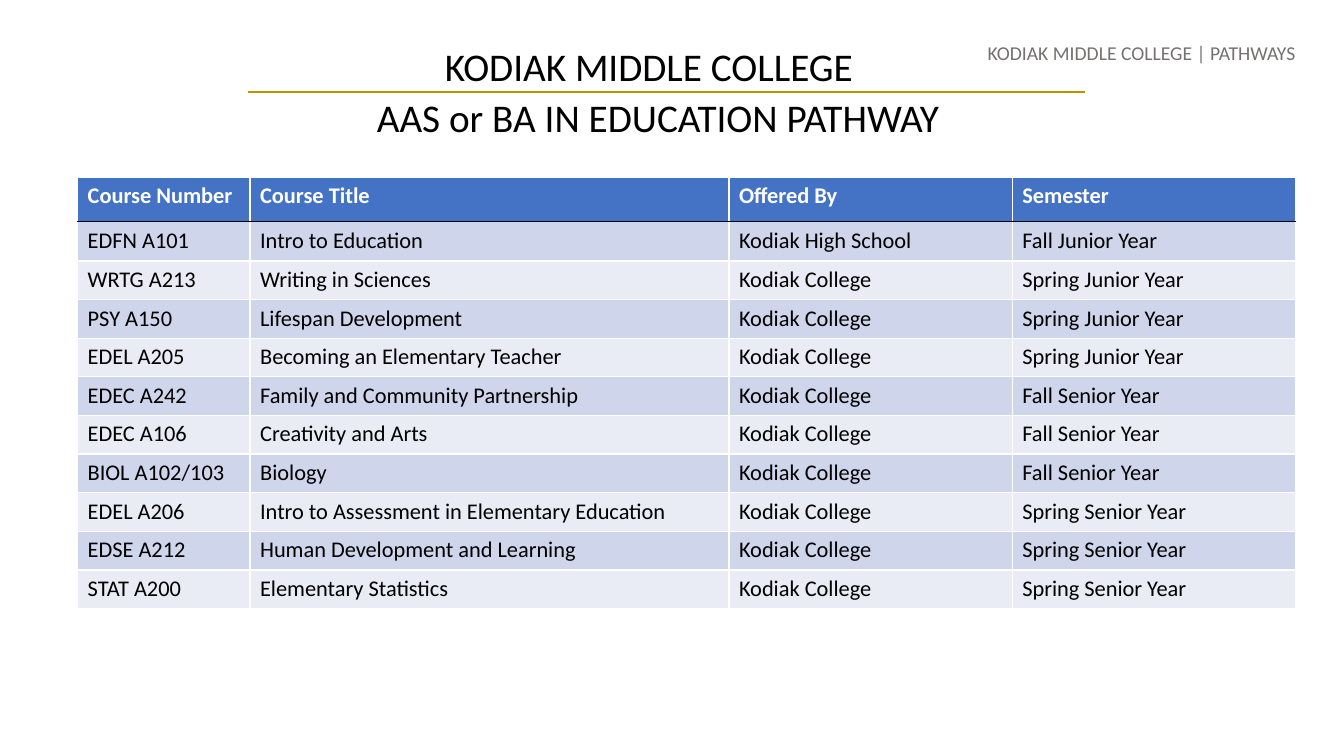
"""Builds the education pathway slide with its course table."""
from lxml.etree import SubElement
from pptx import Presentation
from pptx.dml.color import RGBColor
from pptx.enum.shapes import MSO_CONNECTOR
from pptx.enum.text import PP_ALIGN
from pptx.oxml.ns import qn
from pptx.util import Inches, Pt

HEADER = ("Course Number", "Course Title", "Offered By", "Semester")
COLLEGE = "Kodiak College"
COURSES = [
    ("EDFN A101", "Intro to Education", "Kodiak High School", "Fall Junior Year"),
    ("WRTG A213", "Writing in Sciences", COLLEGE, "Spring Junior Year"),
    ("PSY A150", "Lifespan Development", COLLEGE, "Spring Junior Year"),
    ("EDEL A205", "Becoming an Elementary Teacher", COLLEGE, "Spring Junior Year"),
    ("EDEC A242", "Family and Community Partnership", COLLEGE, "Fall Senior Year"),
    ("EDEC A106", "Creativity and Arts", COLLEGE, "Fall Senior Year"),
    ("BIOL A102/103", "Biology", COLLEGE, "Fall Senior Year"),
    ("EDEL A206", "Intro to Assessment in Elementary Education", COLLEGE, "Spring Senior Year"),
    ("EDSE A212", "Human Development and Learning", COLLEGE, "Spring Senior Year"),
    ("STAT A200", "Elementary Statistics", COLLEGE, "Spring Senior Year"),
]
COLUMN_WIDTHS = (1.71, 4.75, 2.81, 2.81)
TABLE_HEIGHT, HEADER_HEIGHT, FIRST_HEIGHT = 4.28, 0.44, 0.39


def rgb(value):
    return RGBColor.from_string(value)


class PathwaySlide:
    font = "Calibri"
    black, white, gray, gold = "000000", "FFFFFF", "767171", "BF9000"
    header_fill, bands = "4472C4", ("CFD5EA", "E9EBF5")

    def __init__(self, prs):
        self.slide = prs.slides.add_slide(prs.slide_layouts[6])

    def style(self, p, size, color, bold=False):
        for r in p.runs:
            r.font.name = self.font
            r.font.size = Pt(size)
            r.font.bold = bold
            r.font.color.rgb = rgb(color)

    def text(self, x, y, w, h, text, size, color, align, wrap=True):
        sp = self.slide.shapes.add_textbox(Inches(x), Inches(y), Inches(w), Inches(h))
        tf = sp.text_frame
        tf.word_wrap = wrap
        tf.text = text
        p = tf.paragraphs[0]
        p.alignment = align
        self.style(p, size, color)

    def line(self, x1, y1, x2, y2, color, width):
        sp = self.slide.shapes.add_connector(
            MSO_CONNECTOR.STRAIGHT, Inches(x1), Inches(y1), Inches(x2), Inches(y2))
        sp.line.color.rgb = rgb(color)
        sp.line.width = Pt(width)
        SubElement(sp._element.spPr, qn("a:effectLst"))

    def borders(self, cell, row):
        tc_pr = cell._tc.get_or_add_tcPr()
        black_side = {0: "B", 1: "T"}.get(row)
        for side in "LRTB":
            ln = SubElement(tc_pr, qn(f"a:ln{side}"), w=str(Pt(1)))
            fill = SubElement(ln, qn("a:solidFill"))
            color = self.black if side == black_side else self.white
            SubElement(fill, qn("a:srgbClr"), val=color)

    def table(self, x, y, widths, heights, rows):
        table = self.slide.shapes.add_table(
            len(rows), len(widths), Inches(x), Inches(y),
            Inches(sum(widths)), Inches(sum(heights))).table
        for column, width in zip(table.columns, widths):
            column.width = Inches(width)
        for i, (height, values) in enumerate(zip(heights, rows)):
            table.rows[i].height = Inches(height)
            header = i == 0
            for j, value in enumerate(values):
                cell = table.cell(i, j)
                cell.text_frame.text = value
                color = self.white if header else self.black
                self.style(cell.text_frame.paragraphs[0], 16, color, header)
                self.borders(cell, i)
                cell.fill.solid()
                cell.fill.fore_color.rgb = rgb(
                    self.header_fill if header else self.bands[(i - 1) % 2])


def main():
    prs = Presentation()
    prs.slide_width, prs.slide_height = Inches(13.33), Inches(7.5)
    s = PathwaySlide(prs)
    others = len(COURSES) - 1
    row_height = (TABLE_HEIGHT - HEADER_HEIGHT - FIRST_HEIGHT) / others
    heights = [HEADER_HEIGHT, FIRST_HEIGHT] + [row_height] * others
    s.table(0.77, 1.76, COLUMN_WIDTHS, heights, [HEADER] + COURSES)
    s.text(3.19, 0.88, 6.67, 0.57, "AAS or BA IN EDUCATION PATHWAY",
           28, s.black, PP_ALIGN.CENTER)
    s.text(9.1, 0.36, 3.85, 0.34, "KODIAK MIDDLE COLLEGE | PATHWAYS",
           14, s.gray, PP_ALIGN.RIGHT)
    s.line(2.46, 0.91, 10.76, 0.91, s.gold, 1.25)
    s.text(4.29, 0.37, 4.29, 0.57, "KODIAK MIDDLE COLLEGE",
           28, s.black, PP_ALIGN.CENTER, wrap=False)
    prs.save("out.pptx")


if __name__ == "__main__":
    main()
